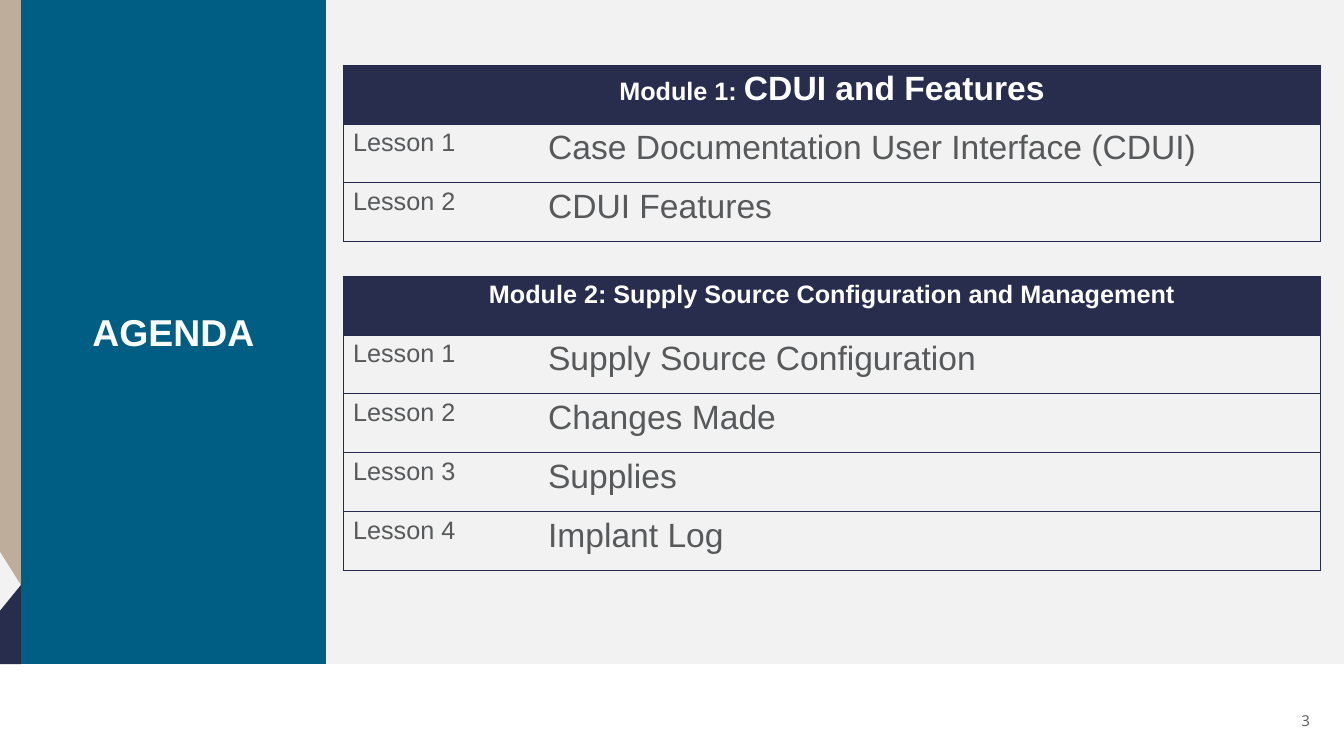
from lxml.etree import SubElement as Sub
from pptx import Presentation
from pptx.dml.color import RGBColor
from pptx.enum.shapes import MSO_SHAPE as Shape
from pptx.enum.text import MSO_ANCHOR as Anchor, MSO_AUTO_SIZE as Auto, PP_ALIGN as Align
from pptx.oxml.ns import qn
from pptx.util import Pt

PX = 9071.43
NAVY, EDGE, GREY, WHITE = "282D4E", "262B4D", "58595B", "FFFFFF"
PLAIN = "{2D5ABB26-0587-4C30-8999-92F81FD0307C}"

MODULES = [
    (276, [("Module 2: Supply Source Configuration and Management", 18)],
     ["Supply Source Configuration", "Changes Made", "Supplies", "Implant Log"]),
    (65, [("Module 1: ", 18), ("CDUI and Features", 24)],
     ["Case Documentation User Interface (CDUI)", "CDUI Features"]),
]
LEFT, COLS, ROW = 343, (195, 783), 59
WEDGES = [
    ("BEAD9A", [(0, 0), (21, 0), (21, 585), (-1, 550)]),
    (NAVY, [(-1, 664), (21, 664), (21, 585), (-1, 612)]),
]


def px(*nums):
    return [round(n * PX) for n in nums]


def rgb(code):
    return RGBColor.from_string(code)


def paint(item, code):
    item.fill.solid()
    item.fill.fore_color.rgb = rgb(code)


def flat(shape, code):
    paint(shape, code)
    shape.line.fill.background()
    shape.shadow.inherit = False


def write(frame, runs, code, align=Align.LEFT, bold=False, face="Arial"):
    para = frame.paragraphs[0]
    para.alignment = align
    for text, size in runs:
        run = para.add_run()
        run.text = text
        font = run.font
        font.name, font.size, font.bold = face, Pt(size), bold
        font.color.rgb = rgb(code)


def inset(frame, gap):
    frame.margin_left = frame.margin_right = px(gap)[0]
    frame.margin_top = frame.margin_bottom = px(gap)[0]
    frame.word_wrap = True
    frame.auto_size = Auto.NONE
    frame.vertical_anchor = Anchor.MIDDLE


def border(cell, sides):
    props = cell._tc.get_or_add_tcPr()
    for side in sides:
        line = Sub(props, qn("a:ln" + side), w=str(Pt(0.75)))
        Sub(Sub(line, qn("a:solidFill")), qn("a:srgbClr"), val=EDGE)


def module(slide, top, head, lessons):
    count = len(lessons) + 1
    frame = slide.shapes.add_table(count, 2, *px(LEFT, top, sum(COLS), ROW * count))
    table = frame.table
    next(frame.element.iter(qn("a:tableStyleId"))).text = PLAIN
    table.horz_banding = False
    for col, width in zip(table.columns, px(*COLS)):
        col.width = width
    for row in table.rows:
        row.height = px(ROW)[0]
    first = table.cell(0, 0)
    first.merge(table.cell(0, 1))
    border(first, "LRTB")
    paint(first, NAVY)
    write(first.text_frame, head, WHITE, Align.CENTER, True)
    for num, name in enumerate(lessons, 1):
        pair = [(f"Lesson {num}", 18, "LTB"), (name, 24, "RTB")]
        for col, (text, size, sides) in enumerate(pair):
            cell = table.cell(num, col)
            border(cell, sides)
            cell.fill.background()
            write(cell.text_frame, [(text, size)], GREY)


def main():
    deck = Presentation()
    deck.slide_width, deck.slide_height = px(1344, 756)
    slide = deck.slides.add_slide(deck.slide_layouts[5])
    shapes = slide.shapes

    title = shapes.title
    title.left, title.top, title.width, title.height = px(21, -1, 305, 665)
    paint(title, "005D83")
    inset(title.text_frame, 40)
    write(title.text_frame, [("AGENDA", 26.7)], WHITE, Align.CENTER, True)

    back = shapes.add_shape(Shape.RECTANGLE, *px(0, 0, 1344, 664))
    flat(back, "F2F2F2")
    title.element.addprevious(back.element)

    for code, points in WEDGES:
        pen = shapes.build_freeform(*points[0], scale=PX)
        pen.add_line_segments(points[1:])
        flat(pen.convert_to_shape(), code)

    page = shapes.add_textbox(*px(1260, 698, 50, 46)).text_frame
    inset(page, 0)
    write(page, [("3", 10.7)], GREY, Align.RIGHT, face="Open Sans")

    for part in MODULES:
        module(slide, *part)
    deck.save("out.pptx")


if __name__ == "__main__":
    main()
